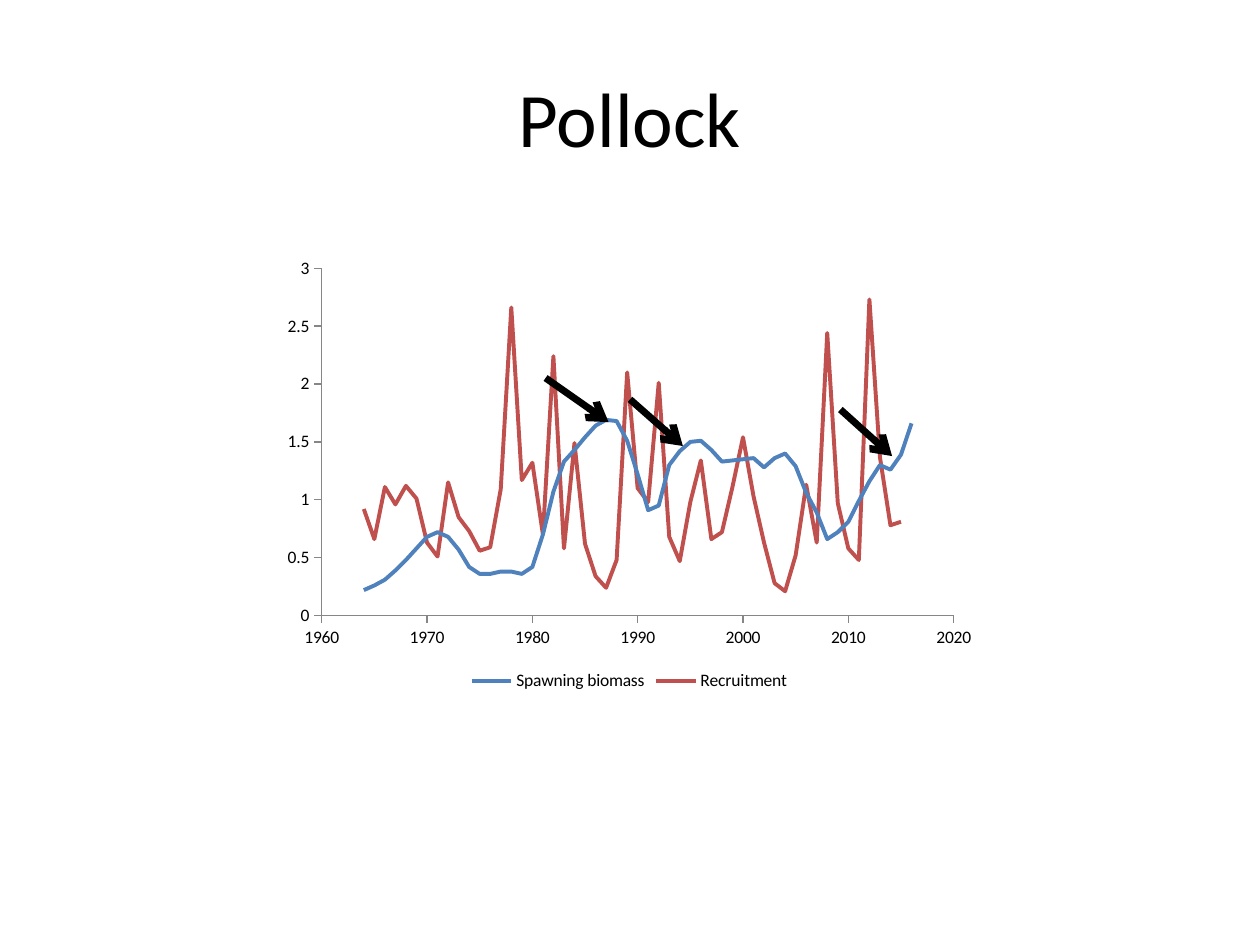
from dataclasses import dataclass

import pptx
import pptx.chart.data
import pptx.dml.color
import pptx.enum.chart
import pptx.enum.shapes
import pptx.enum.text
import pptx.oxml
import pptx.oxml.ns
import pptx.util
from pptx.util import Inches

FONT = "Calibri"
BLACK = "000000"
AXIS_GRAY = "868686"
FIRST_YEAR = 1964


@dataclass(frozen=True)
class Series:
    name: str
    color: str
    values: tuple[float, ...]


@dataclass(frozen=True)
class Arrow:
    start: tuple[float, float]
    end: tuple[float, float]


SERIES = (
    Series("Spawning biomass", "4F81BD", (
        0.22, 0.26, 0.31, 0.39, 0.48, 0.58, 0.68, 0.72, 0.68, 0.57, 0.42,
        0.36, 0.36, 0.38, 0.38, 0.36, 0.42, 0.7, 1.07, 1.33, 1.43, 1.54,
        1.64, 1.69, 1.68, 1.51, 1.22, 0.91, 0.95, 1.3, 1.42, 1.5, 1.51,
        1.43, 1.33, 1.34, 1.35, 1.36, 1.28, 1.36, 1.4, 1.29, 1.06, 0.89,
        0.66, 0.72, 0.81, 0.99, 1.16, 1.3, 1.26, 1.39, 1.66)),
    Series("Recruitment", "C0504D", (
        0.92, 0.66, 1.11, 0.96, 1.12, 1.01, 0.63, 0.51, 1.15, 0.85, 0.73,
        0.56, 0.59, 1.09, 2.66, 1.17, 1.32, 0.7, 2.24, 0.58, 1.49, 0.62,
        0.34, 0.24, 0.48, 2.1, 1.1, 0.98, 2.01, 0.68, 0.47, 0.98, 1.34,
        0.66, 0.72, 1.11, 1.54, 1.03, 0.63, 0.28, 0.21, 0.52, 1.13, 0.63,
        2.44, 0.97, 0.58, 0.48, 2.73, 1.37, 0.78, 0.81)),
)

ARROWS = (
    Arrow((4.33, 3), (4.83, 3.35)),
    Arrow((5, 3.17), (5.42, 3.54)),
    Arrow((6.67, 3.25), (7.08, 3.62)),
)


def rgb(color: str) -> pptx.dml.color.RGBColor:
    return pptx.dml.color.RGBColor.from_string(color)


def style_line(line, color: str, width: float) -> None:
    line.color.rgb = rgb(color)
    line.width = pptx.util.Pt(width)


def style_font(font, size: float) -> None:
    font.name = FONT
    font.size = pptx.util.Pt(size)
    font.color.rgb = rgb(BLACK)


def add_title(slide, text: str) -> None:
    title = slide.shapes.add_textbox(Inches(0.5), Inches(0.3), Inches(9), Inches(1.25))
    title.text_frame.word_wrap = True
    title.text_frame.vertical_anchor = pptx.enum.text.MSO_ANCHOR.MIDDLE
    paragraph = title.text_frame.paragraphs[0]
    paragraph.text = text
    paragraph.alignment = pptx.enum.text.PP_ALIGN.CENTER
    style_font(paragraph.font, 44)


def style_axis(axis, minimum: float, maximum: float, step: float) -> None:
    axis.minimum_scale = minimum
    axis.maximum_scale = maximum
    axis.major_unit = step
    axis.has_major_gridlines = False
    axis.major_tick_mark = pptx.enum.chart.XL_TICK_MARK.OUTSIDE
    axis.tick_labels.number_format = "General"
    axis.tick_labels.number_format_is_linked = False
    style_line(axis.format.line, AXIS_GRAY, 0.75)


def add_chart(slide, series_list: tuple[Series, ...]) -> None:
    data = pptx.chart.data.XyChartData()
    for series in series_list:
        points = data.add_series(series.name)
        for year, value in enumerate(series.values, FIRST_YEAR):
            points.add_data_point(year, value)
    chart = slide.shapes.add_chart(
        pptx.enum.chart.XL_CHART_TYPE.XY_SCATTER_LINES_NO_MARKERS,
        Inches(2.17), Inches(1.98), Inches(5.65), Inches(3.54), data).chart
    style_font(chart.font, 10)
    chart.has_title = False
    chart.has_legend = True
    chart.legend.position = pptx.enum.chart.XL_LEGEND_POSITION.BOTTOM
    chart.legend.include_in_layout = False
    style_axis(chart.category_axis, 1960, 2020, 10)
    style_axis(chart.value_axis, 0, 3, 0.5)
    plot = chart.plots[0]
    plot.vary_by_categories = False
    for drawn, series in zip(plot.series, series_list):
        drawn.smooth = False
        drawn.marker.style = pptx.enum.chart.XL_MARKER_STYLE.NONE
        style_line(drawn.format.line, series.color, 2.25)


def add_arrow(slide, arrow: Arrow) -> None:
    connector = slide.shapes.add_connector(
        pptx.enum.shapes.MSO_CONNECTOR.STRAIGHT,
        *map(Inches, arrow.start + arrow.end))
    style_line(connector.line, BLACK, 4)
    tail = pptx.oxml.ns.qn("a:tailEnd")
    connector.line._get_or_add_ln().append(
        connector.line._get_or_add_ln().makeelement(tail, {"type": "arrow"}))
    properties = connector._element.spPr
    properties.append(properties.makeelement(pptx.oxml.ns.qn("a:effectLst"), {}))


def main() -> None:
    presentation = pptx.Presentation()
    presentation.slide_width = Inches(10)
    presentation.slide_height = Inches(7.5)
    slide = presentation.slides.add_slide(presentation.slide_layouts[6])
    add_chart(slide, SERIES)
    add_title(slide, "Pollock")
    for arrow in ARROWS:
        add_arrow(slide, arrow)
    presentation.save("out.pptx")


if __name__ == "__main__":
    main()
